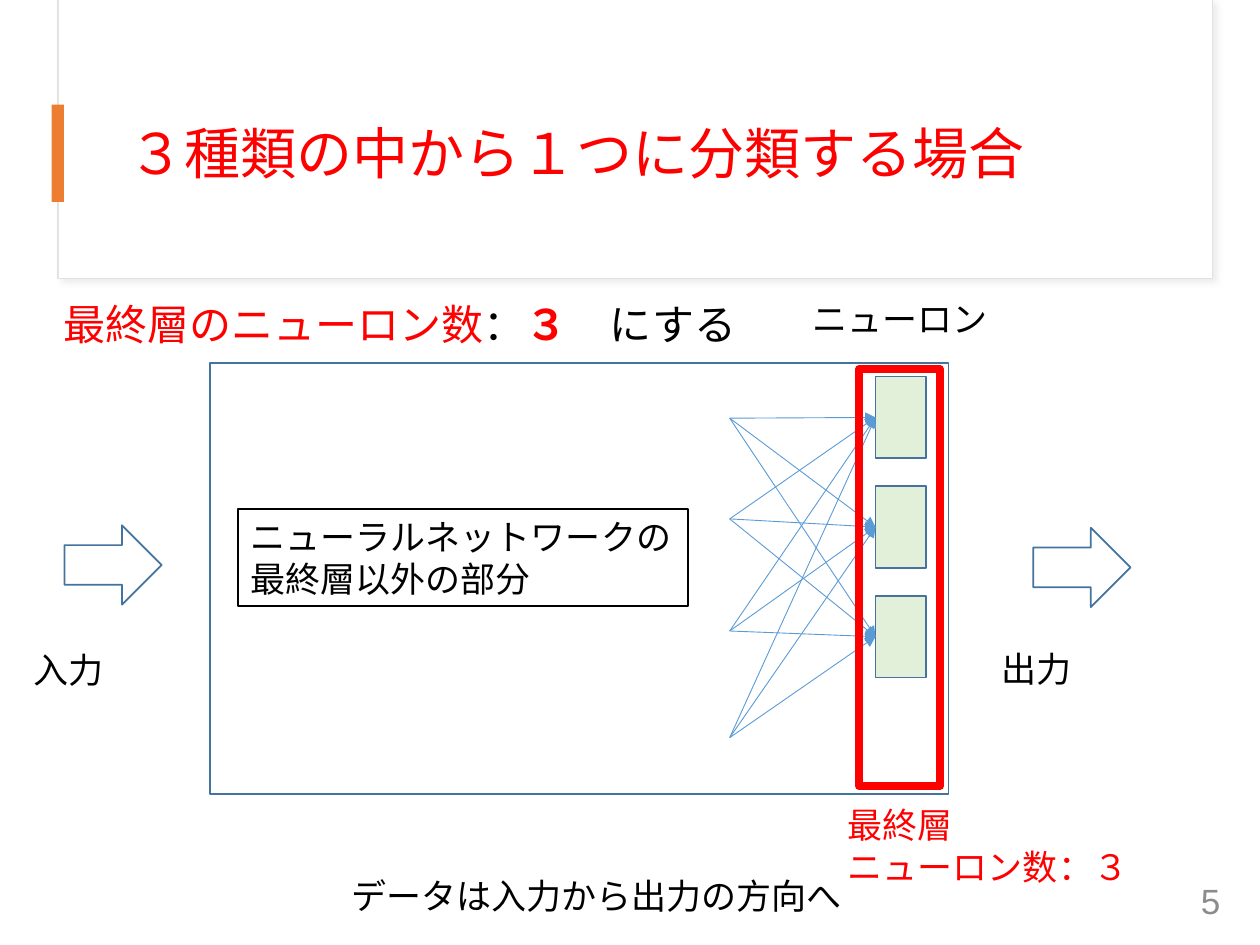
from lxml import etree
from pptx import Presentation
from pptx.dml.color import RGBColor
from pptx.enum.shapes import MSO_CONNECTOR as Connector, MSO_SHAPE as Shape
from pptx.enum.text import MSO_ANCHOR as Anchor, MSO_AUTO_SIZE as AutoSize, PP_ALIGN as Align
from pptx.oxml import parse_xml
from pptx.oxml.ns import nsdecls, qn
from pptx.util import Cm, Pt

COLORS = {
    "white": "FFFFFF", "black": "000000", "red": "FF0000", "orange": "ED7D31",
    "green": "E2F0D9", "outline": "43739E", "link": "5B9BD5",
    "edge": "E1E1E1", "shade": "D9D9D9", "gray": "8C8C8C",
}
NEURON_LEFT, NEURON_TOP, NEURON_STEP = 17.65, 7.59, 2.21
SOURCE_X = 14.71
SOURCE_YS = (8.43, 10.46, 12.72, 14.87)


def color(name):
    return RGBColor.from_string(COLORS[name])


def add_block(page, kind, place, fill=None, line=None, width=1):
    block = page.shapes.add_shape(kind, *map(Cm, place))
    block.shadow.inherit = False
    if fill:
        block.fill.solid()
        block.fill.fore_color.rgb = color(fill)
    else:
        block.fill.background()
    if line:
        block.line.color.rgb = color(line)
        block.line.width = Pt(width)
    else:
        block.line.fill.background()
    return block


def add_soft_shadow(block):
    effects = block._element.spPr.find(qn("a:effectLst"))
    effects.append(parse_xml(
        f'<a:outerShdw {nsdecls("a")} blurRad="{Pt(4)}" dist="{Pt(3)}" dir="2700000">'
        f'<a:srgbClr val="{COLORS["shade"]}"><a:alpha val="50000"/></a:srgbClr>'
        '</a:outerShdw>'))


def add_text(page, place, lines, grow=True, anchor=Anchor.TOP, align=Align.LEFT,
             spacing=None, **style):
    """Each line is a list of (text, colour name, bold) spans."""
    box = page.shapes.add_textbox(*map(Cm, place))
    frame = box.text_frame
    frame.word_wrap = not grow
    frame.auto_size = AutoSize.SHAPE_TO_FIT_TEXT if grow else AutoSize.NONE
    frame.vertical_anchor = anchor
    form = {"name": "Calibri", "size": Pt(20), **style}
    for index, spans in enumerate(lines):
        para = frame.paragraphs[0] if index == 0 else frame.add_paragraph()
        para.alignment = align
        para.line_spacing = spacing
        for text, tint, bold in spans:
            span = para.add_run()
            span.text = text
            span.font.color.rgb = color(tint)
            for key, value in {**form, "bold": bold}.items():
                setattr(span.font, key, value)
    return box


def add_label(page, place, *texts, tint="black"):
    return add_text(page, place, [[(text, tint, False)] for text in texts])


def add_link(page, source_y, neuron):
    link = page.shapes.add_connector(
        Connector.STRAIGHT, Cm(SOURCE_X), Cm(source_y), neuron.left, neuron.top)
    link.end_connect(neuron, 1)
    link.line.color.rgb = color("link")
    link.line.width = Pt(0.5)
    etree.SubElement(link.line._get_or_add_ln(), qn("a:tailEnd"), type="triangle")
    etree.SubElement(link._element.spPr, qn("a:effectLst"))


def add_header(page):
    card = add_block(page, Shape.RECTANGLE, (1.17, 0, 23.27, 5.61), "white", "edge", 0.75)
    add_soft_shadow(card)
    add_block(page, Shape.RECTANGLE, (1.19, 0, 23.24, 5.59), "white")
    add_text(page, (2.34, 1.52, 21.18, 3.28),
             [[("３種類の中から１つに分類する場合", "red", False)]], grow=False,
             anchor=Anchor.MIDDLE, spacing=0.9, name="Arial", size=Pt(32))
    add_block(page, Shape.RECTANGLE, (1.04, 2.11, 0.25, 1.96), "orange")


def add_network(page):
    neurons = [
        add_block(page, Shape.RECTANGLE,
                  (NEURON_LEFT, NEURON_TOP + row * NEURON_STEP, 1.02, 1.65),
                  "green", "outline")
        for row in range(3)
    ]
    for neuron in neurons:
        for source_y in SOURCE_YS:
            add_link(page, source_y, neuron)
    add_block(page, Shape.RECTANGLE, (4.24, 7.32, 14.88, 8.69), line="outline")
    add_block(page, Shape.RECTANGLE, (17.32, 7.44, 1.63, 8.41), line="red", width=4.5)
    for left, top in ((1.3, 10.59), (20.83, 10.64)):
        add_block(page, Shape.RIGHT_ARROW, (left, top, 1.96, 1.6), line="outline")


def add_labels(page):
    add_label(page, (0.43, 12.95, 1.93, 1.12), "入力")
    add_label(page, (19.94, 12.93, 1.93, 1.12), "出力")
    add_label(page, (6.83, 17.5, 10.49, 1.12), "データは入力から出力の方向へ")
    add_label(page, (16.13, 5.87, 4.06, 1.12), "ニューロン")
    add_label(page, (16.84, 16.08, 6.22, 1.96), "最終層", "ニューロン数：３", tint="red")
    hidden = add_label(page, (4.8, 10.26, 9.07, 1.96),
                       "ニューラルネットワークの", "最終層以外の部分")
    hidden.line.color.rgb = color("black")
    hidden.line.width = Pt(0.75)


def main():
    deck = Presentation()
    deck.slide_width, deck.slide_height = Cm(25.4), Cm(19.05)
    page = deck.slides.add_slide(deck.slide_layouts[6])
    add_header(page)
    add_network(page)
    add_labels(page)
    add_text(page, (1.04, 5.89, 20.4, 2.87),
             [[("最終層のニューロン数", "red", False), ("：", "black", False),
               ("３", "red", True), ("　にする", "black", False)]],
             grow=False, name="Arial", size=Pt(24))
    add_text(page, (19.13, 17.65, 5.72, 1.02), [[("5", "gray", False)]], grow=False,
             anchor=Anchor.MIDDLE, align=Align.RIGHT, name="Arial")
    deck.save("out.pptx")


if __name__ == "__main__":
    main()
